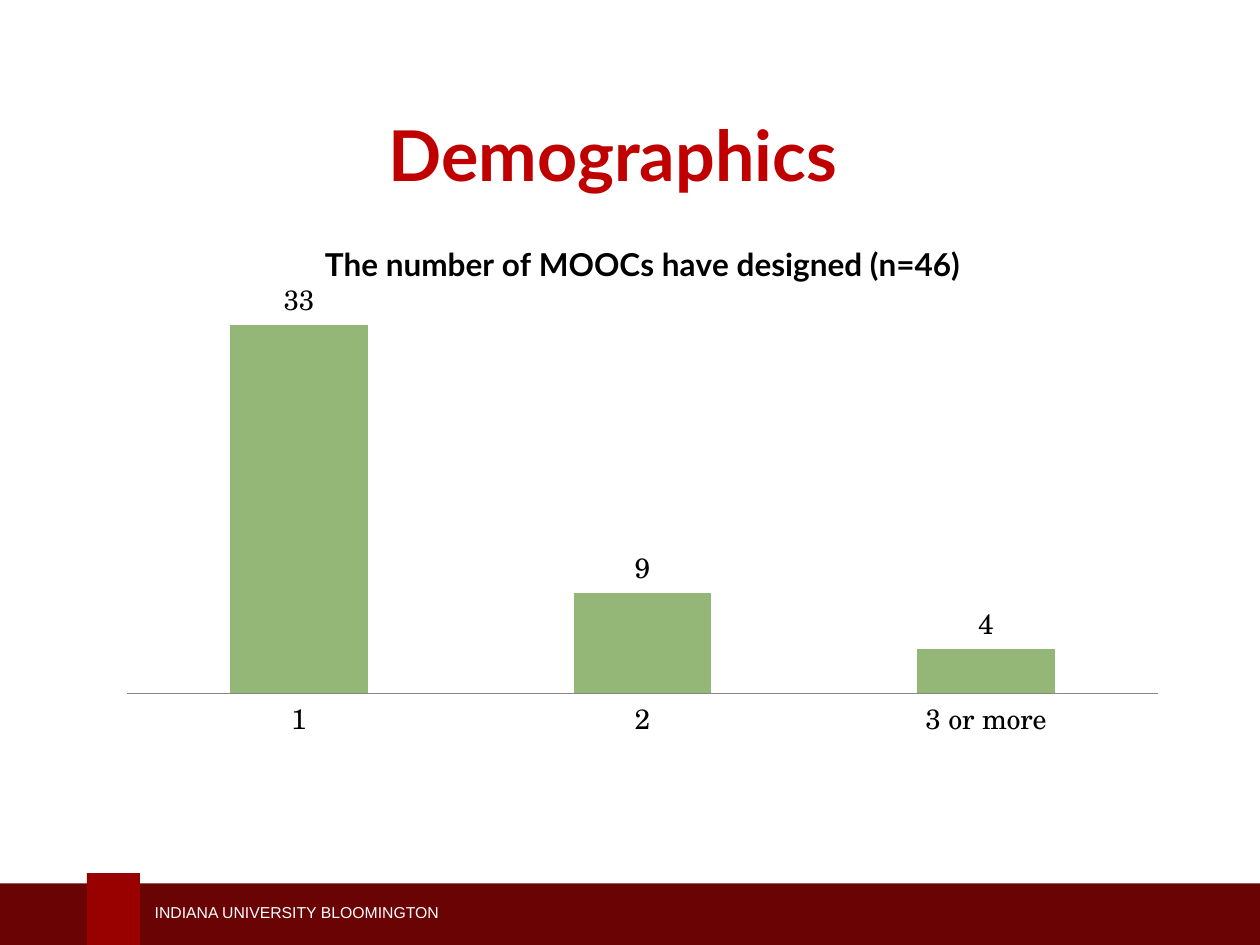
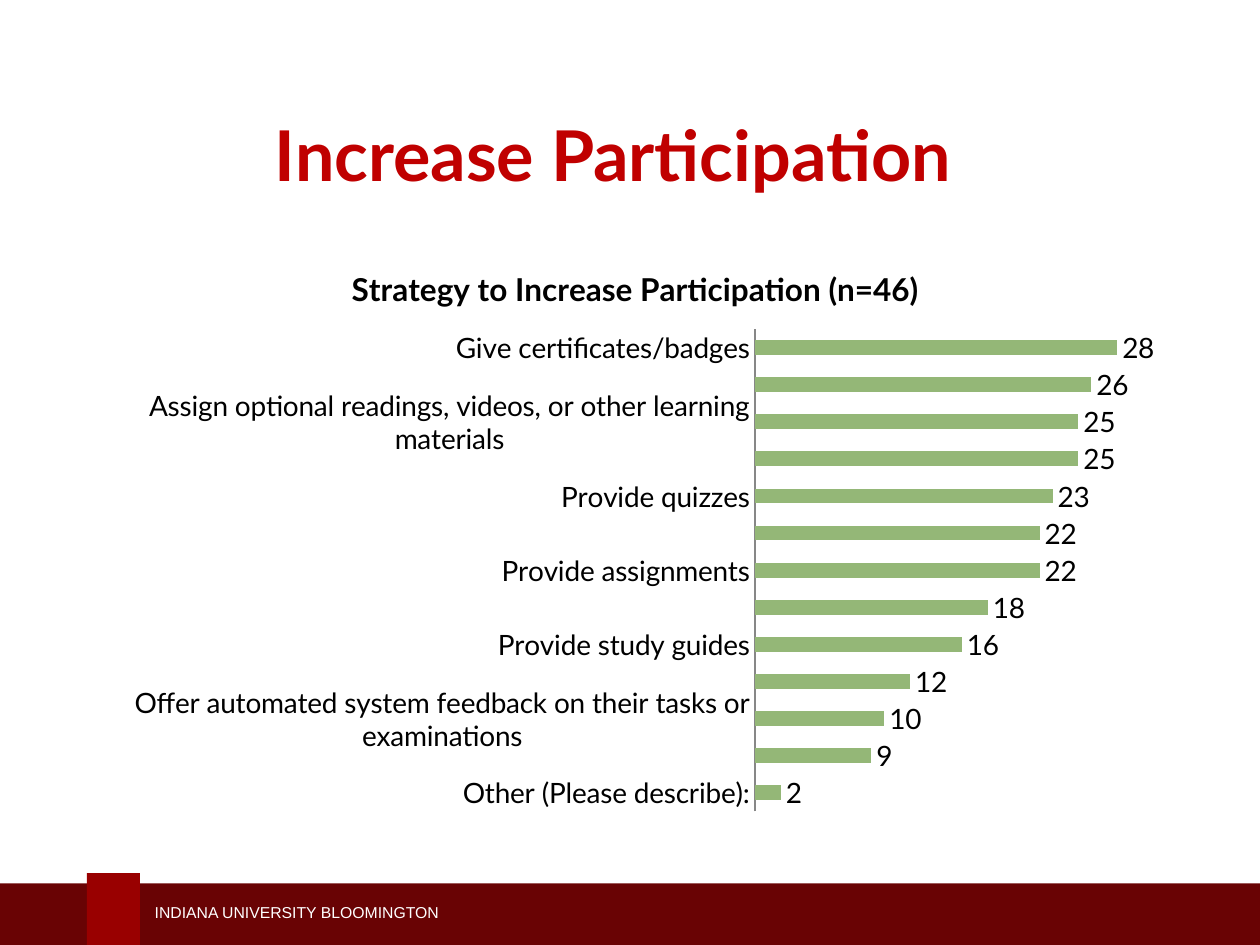
from pptx import Presentation
from pptx.chart.data import CategoryChartData
from pptx.dml.color import RGBColor
from pptx.enum.chart import XL_CHART_TYPE as ChartType
from pptx.enum.chart import XL_LABEL_POSITION as LabelPosition
from pptx.enum.chart import XL_TICK_MARK as TickMark
from pptx.enum.shapes import MSO_SHAPE as Shape
from pptx.enum.text import MSO_ANCHOR as Anchor
from pptx.enum.text import PP_ALIGN as Align
from pptx.util import Cm, Pt

COLORS = {
    "title": "C00000",
    "band": "690304",
    "tab": "990000",
    "footer": "FFFFFF",
    "bar": "94B777",
    "text": "000000",
    "axis": "878787",
}
HEADING_FONT = "Lato"
SERIF_FONT = "TeX Gyre Schola"
FOOTER_FONT = "Arial"
TITLE_ONLY = 5

MOOC_COUNTS = {"1": 33, "2": 9, "3 or more": 4}
# Bars run from the bottom upwards
STRATEGIES = {
    "Other (Please describe):": 2,
    "Conduct recorded live video broadcasts": 9,
    "Offer automated system feedback on their tasks or examinations": 10,
    "Organize peer groups or collaborative teams": 12,
    "Provide study guides": 16,
    "Encourage participants to do an authentic project": 18,
    "Provide assignments": 22,
    "Offer human feedback on their tasks and ideas": 22,
    "Provide quizzes": 23,
    "Attempt to create learning communities": 25,
    "Assign optional readings, videos, or other learning materials": 25,
    "Use multimedia (e.g., video lectures, audio files, info-graphics)": 26,
    "Give certificates/badges": 28,
}


def rgb(name):
    return RGBColor.from_string(COLORS[name])


def style_font(font, name, size, color="text", bold=False):
    font.name = name
    font.size = Pt(size)
    font.bold = bold
    font.color.rgb = rgb(color)


def add_block(slide, color, left, top, width, height):
    block = slide.shapes.add_shape(
        Shape.RECTANGLE, Cm(left), Cm(top), Cm(width), Cm(height))
    block.shadow.inherit = False
    block.fill.solid()
    block.fill.fore_color.rgb = rgb(color)
    block.line.fill.background()
    return block


def add_footer_text(slide, text):
    box = slide.shapes.add_textbox(Cm(2.87), Cm(18.06), Cm(10.03), Cm(0.64))
    frame = box.text_frame
    frame.word_wrap = True
    frame.vertical_anchor = Anchor.MIDDLE
    paragraph = frame.paragraphs[0]
    paragraph.text = text
    style_font(paragraph.font, FOOTER_FONT, 9, "footer")
    return box


def move_footer_to_layout(slide):
    """Build the footer once and let every slide inherit it."""
    footer = [
        add_block(slide, "band", 0, 17.81, 25.4, 1.24),
        add_block(slide, "tab", 1.75, 17.6, 1.07, 1.45),
        add_footer_text(slide, "INDIANA UNIVERSITY BLOOMINGTON"),
    ]
    layout_tree = slide.slide_layout.shapes.element
    for shape in footer:
        layout_tree.append(shape.element)


def add_titled_slide(presentation, text):
    slide = presentation.slides.add_slide(presentation.slide_layouts[TITLE_ONLY])
    title = slide.shapes.title
    title.left, title.top = Cm(1.24), Cm(2.21)
    title.width, title.height = Cm(22.23), Cm(1.78)
    title.text_frame.vertical_anchor = Anchor.MIDDLE
    paragraph = title.text_frame.paragraphs[0]
    paragraph.text = text
    paragraph.alignment = Align.CENTER
    style_font(paragraph.font, HEADING_FONT, 40, "title", bold=True)
    return slide


def add_bar_chart(slide, chart_type, heading, values, label_font, place):
    data = CategoryChartData()
    data.categories = values.keys()
    data.add_series("Series 1", values.values())
    frame = slide.shapes.add_chart(chart_type, *map(Cm, place), data)
    chart = frame.chart
    style_font(chart.font, FOOTER_FONT, 10)
    chart.has_legend = False

    # Heading
    chart.has_title = True
    paragraph = chart.chart_title.text_frame.paragraphs[0]
    paragraph.text = heading
    style_font(paragraph.font, HEADING_FONT, 18, bold=True)

    # Axes
    chart.value_axis.visible = False
    chart.value_axis.has_major_gridlines = False
    chart.value_axis.minimum_scale = 0
    axis = chart.category_axis
    axis.major_tick_mark = axis.minor_tick_mark = TickMark.NONE
    axis.format.line.color.rgb = rgb("axis")
    axis.format.line.width = Pt(0.75)
    style_font(axis.tick_labels.font, label_font, 16)

    # Bars and their values
    plot = chart.plots[0]
    plot.vary_by_categories = False
    plot.gap_width = 150
    plot.overlap = -25
    fill = plot.series[0].format.fill
    fill.solid()
    fill.fore_color.rgb = rgb("bar")
    plot.has_data_labels = True
    labels = plot.data_labels
    labels.show_value = True
    labels.position = LabelPosition.OUTSIDE_END
    style_font(labels.font, label_font, 16)


def main():
    presentation = Presentation()
    presentation.slide_width, presentation.slide_height = Cm(25.4), Cm(19.05)

    # Number of courses designed
    slide = add_titled_slide(presentation, "Demographics")
    move_footer_to_layout(slide)
    add_bar_chart(slide, ChartType.COLUMN_CLUSTERED,
                  "The number of MOOCs have designed (n=46)",
                  MOOC_COUNTS, SERIF_FONT, (2.13, 4.39, 21.64, 10.72))

    # Participation strategies
    slide = add_titled_slide(presentation, "Increase Participation")
    add_bar_chart(slide, ChartType.BAR_CLUSTERED,
                  "Strategy to Increase Participation (n=46) ",
                  STRATEGIES, HEADING_FONT, (2.29, 4.88, 21.18, 11.71))

    presentation.save("out.pptx")


if __name__ == "__main__":
    main()
